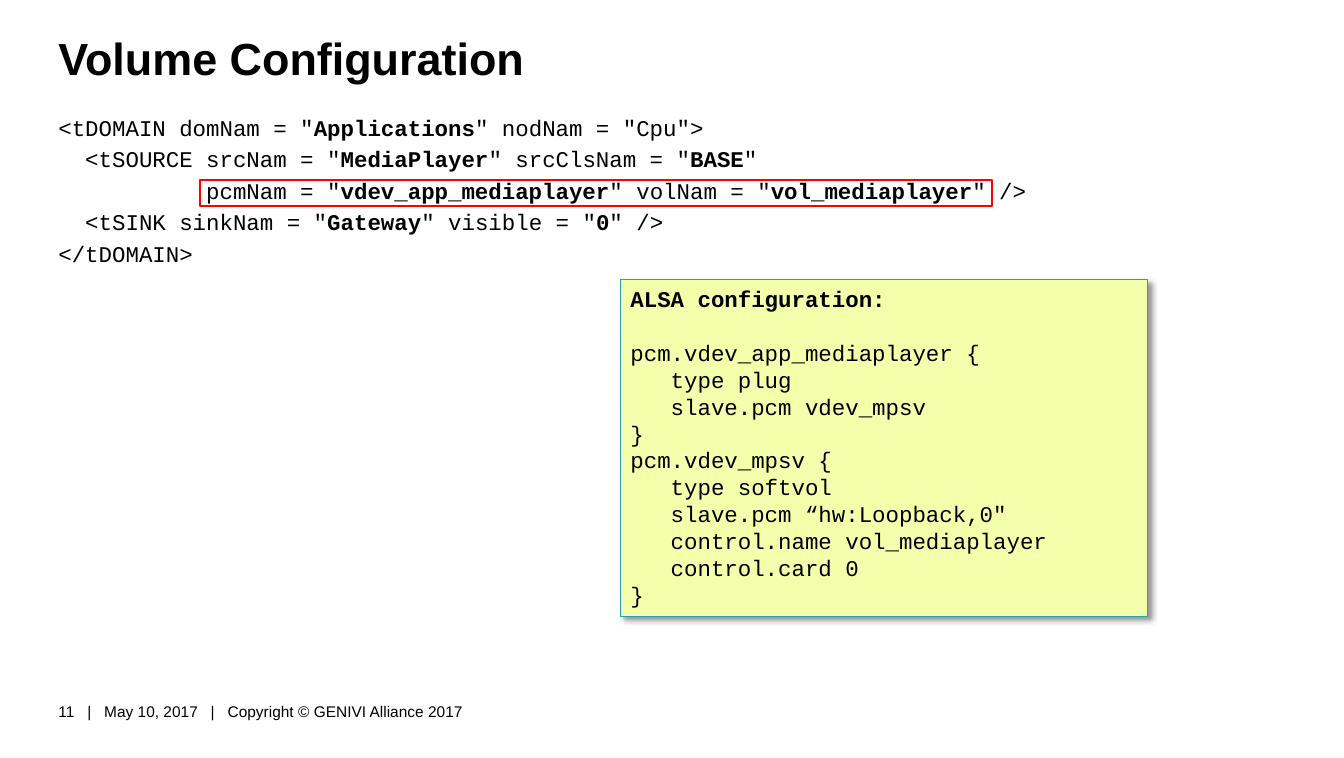
from dataclasses import dataclass
from typing import Optional

from lxml.etree import SubElement
from pptx import Presentation
from pptx.dml.color import RGBColor
from pptx.enum.shapes import MSO_SHAPE
from pptx.enum.text import MSO_ANCHOR, PP_ALIGN
from pptx.oxml.ns import qn
from pptx.shapes.autoshape import Shape
from pptx.slide import Slide
from pptx.util import Inches, Pt

BLACK = RGBColor(0x00, 0x00, 0x00)
LIME = RGBColor(0xF3, 0xFF, 0xAB)
TEAL = RGBColor(0x2E, 0x9E, 0xB3)
RED = RGBColor(0xFF, 0x00, 0x00)

COLUMN = ROW = Inches(0.1)
COLUMNS, ROWS = 133, 75
MARGIN = 4.8
CODE_FONT, CODE_SIZE = "Courier New", 16
LINE_HEIGHT = 1.2 * CODE_SIZE


@dataclass(frozen=True)
class Line:
    spans: tuple[str, ...]
    space_before: float = 0


@dataclass(frozen=True)
class Block:
    left: float
    top: float
    width: float
    height: float
    lines: tuple[Line, ...] = ()
    font: str = CODE_FONT
    size: float = CODE_SIZE
    anchor: MSO_ANCHOR = MSO_ANCHOR.TOP
    fill: Optional[RGBColor] = None
    outline: Optional[RGBColor] = None
    outline_width: float = 0
    shadow: bool = False


DOMAIN_GAP = 0.2 * CODE_SIZE
DOMAIN_LINES = (
    Line(('<tDOMAIN domNam = "', "Applications", '" nodNam = "Cpu">')),
    Line(('  <tSOURCE srcNam = "', "MediaPlayer", '" srcClsNam = "', "BASE", '"'), DOMAIN_GAP),
    Line(('           pcmNam = "', "vdev_app_mediaplayer", '" volNam = "',
          "vol_mediaplayer", '" />'), DOMAIN_GAP),
    Line(('  <tSINK sinkNam = "', "Gateway", '" visible = "', "0", '" />'), DOMAIN_GAP),
    Line(("</tDOMAIN>",), DOMAIN_GAP),
)
ALSA_LINES = (
    Line(("", "ALSA configuration:")),
    Line(("pcm.vdev_app_mediaplayer {",), LINE_HEIGHT),
    Line(("   type plug",)),
    Line(("   slave.pcm vdev_mpsv",)),
    Line(("}",)),
    Line(("pcm.vdev_mpsv {",)),
    Line(("   type softvol",)),
    Line(('   slave.pcm “hw:Loopback,0"',)),
    Line(("   control.name vol_mediaplayer",)),
    Line(("   control.card 0",)),
    Line(("}",)),
)
FOOTER = "11   |   May 10, 2017   |   Copyright © GENIVI Alliance 2017"

BLOCKS = (
    Block(MARGIN, 2, 119.7, 7.3, (Line(("", "Volume Configuration")),),
          font="Arial", size=32, anchor=MSO_ANCHOR.MIDDLE),
    Block(MARGIN, 69, 49.4, 4, (Line((FOOTER,)),), font="Arial", size=11),
    Block(MARGIN, 10.8, 119.7, 55.1, DOMAIN_LINES),
    Block(61.4, 27.7, 52.2, 33.3, ALSA_LINES, fill=LIME,
          outline=TEAL, outline_width=0.75, shadow=True),
    Block(19.8, 17.8, 78.4, 2.6, outline=RED, outline_width=1.25),
)


def add_shadow(shape: Shape) -> None:
    effects = shape._element.spPr.find(qn("a:effectLst"))
    shadow = SubElement(effects, qn("a:outerShdw"), blurRad=str(Pt(4)), dist=str(Pt(3)),
                        dir=str(45 * 60000), algn="tl", rotWithShape="0")
    color = SubElement(shadow, qn("a:srgbClr"), val=str(BLACK))
    SubElement(color, qn("a:alpha"), val="40000")


def write_lines(shape: Shape, block: Block) -> None:
    frame = shape.text_frame
    frame.word_wrap = True
    frame.vertical_anchor = block.anchor
    for index, line in enumerate(block.lines):
        para = frame.add_paragraph() if index else frame.paragraphs[0]
        para.alignment = PP_ALIGN.LEFT
        if line.space_before:
            para.space_before = Pt(line.space_before)
        for position, text in enumerate(line.spans):
            if not text:
                continue
            span = para.add_run()
            span.text = text
            span.font.name = block.font
            span.font.size = Pt(block.size)
            span.font.bold = position % 2 == 1
            span.font.color.rgb = BLACK


def draw_block(page: Slide, block: Block) -> None:
    place = (round(block.left * COLUMN), round(block.top * ROW),
             round(block.width * COLUMN), round(block.height * ROW))
    if block.outline is None:
        shape = page.shapes.add_textbox(*place)
    else:
        shape = page.shapes.add_shape(MSO_SHAPE.RECTANGLE, *place)
        shape.shadow.inherit = False
        shape.line.color.rgb = block.outline
        shape.line.width = Pt(block.outline_width)
        if block.fill is None:
            shape.fill.background()
        else:
            shape.fill.solid()
            shape.fill.fore_color.rgb = block.fill
    if block.shadow:
        add_shadow(shape)
    if block.lines:
        write_lines(shape, block)


def main() -> None:
    deck = Presentation()
    deck.slide_width = COLUMNS * COLUMN
    deck.slide_height = ROWS * ROW
    page = deck.slides.add_slide(deck.slide_layouts[6])
    for block in BLOCKS:
        draw_block(page, block)
    deck.save("out.pptx")


if __name__ == "__main__":
    main()
